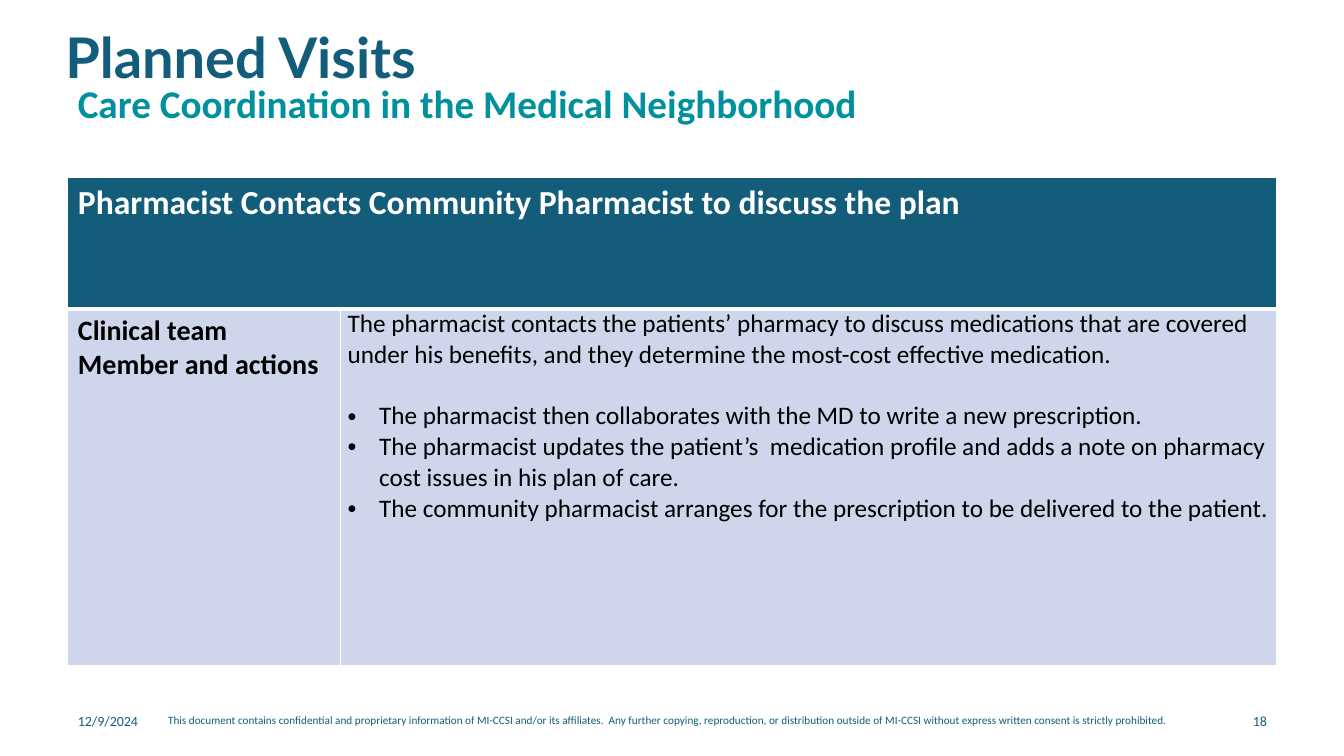
from lxml import etree
from pptx import Presentation
from pptx.dml.color import RGBColor
from pptx.enum import text
from pptx.oxml import ns
from pptx.util import Pt

NAVY = RGBColor(0x13, 0x5D, 0x7A)
TEAL = RGBColor(0x00, 0x90, 0x9E)
LAVENDER = RGBColor(0xCF, 0xD5, 0xEA)
WHITE = RGBColor(0xFF, 0xFF, 0xFF)
BLACK = RGBColor(0x00, 0x00, 0x00)
TOP, MIDDLE, BOTTOM = (text.MSO_ANCHOR.TOP, text.MSO_ANCHOR.MIDDLE,
                       text.MSO_ANCHOR.BOTTOM)

BULLETS = [
    "The pharmacist then collaborates with the MD to write a new prescription.",
    "The pharmacist updates the patient’s  medication profile and adds a note "
    "on pharmacy cost issues in his plan of care.",
    "The community pharmacist arranges for the prescription to be delivered "
    "to the patient.",
]


def style(p, size, color, bold=False, name="Calibri"):
    for r in p.runs:
        r.font.size, r.font.bold, r.font.name = Pt(size), bold, name
        r.font.color.rgb = color


def add_text(s, box, words, size, color=NAVY, bold=False, name="Calibri",
             anchor=TOP, align=text.PP_ALIGN.LEFT, spacing=1.0):
    tf = s.shapes.add_textbox(*(Pt(v) for v in box)).text_frame
    tf.word_wrap, tf.vertical_anchor = True, anchor
    p = tf.paragraphs[0]
    p.text, p.alignment, p.line_spacing = words, align, spacing
    style(p, size, color, bold, name)


def add_bullet(p):
    pPr = p._p.get_or_add_pPr()
    pPr.set("marL", str(Pt(22.5)))
    pPr.set("indent", str(-Pt(22.5)))
    font = etree.SubElement(pPr, ns.qn("a:buFont"))
    font.set("typeface", "Arial")
    etree.SubElement(pPr, ns.qn("a:buChar")).set("char", "•")


def set_borders(cell, top=1, bottom=1):
    tcPr = cell._tc.get_or_add_tcPr()
    widths = {"a:lnL": 1, "a:lnR": 1, "a:lnT": top, "a:lnB": bottom}
    for i, (tag, width) in enumerate(widths.items()):
        ln = etree.Element(ns.qn(tag), w=str(Pt(width)))
        fill = etree.SubElement(ln, ns.qn("a:solidFill"))
        etree.SubElement(fill, ns.qn("a:srgbClr")).set("val", str(WHITE))
        tcPr.insert(i, ln)


def fill_cell(cell, words, size, fill, color, bold=True, **borders):
    cell.fill.solid()
    cell.fill.fore_color.rgb = fill
    set_borders(cell, **borders)
    p = cell.text_frame.paragraphs[0]
    p.text = words
    style(p, size, color, bold)


def add_visit_table(s):
    tbl = s.shapes.add_table(2, 2, Pt(48.5), Pt(127), Pt(863.5), Pt(348.5)).table
    for col, width in zip(tbl.columns, (194.5, 669)):
        col.width = Pt(width)
    for row, height in zip(tbl.rows, (93.5, 255)):
        row.height = Pt(height)

    # Header across both columns
    tbl.cell(0, 0).merge(tbl.cell(0, 1))
    fill_cell(tbl.cell(0, 0),
              "Pharmacist Contacts Community Pharmacist to discuss the plan",
              24, NAVY, WHITE, bottom=3)

    # Row label and actions
    fill_cell(tbl.cell(1, 0), "Clinical team Member and actions",
              20, LAVENDER, BLACK, top=3)
    actions = tbl.cell(1, 1)
    actions.margin_left = actions.margin_right = Pt(5.4)
    actions.margin_top = actions.margin_bottom = Pt(0)
    fill_cell(actions,
              "The pharmacist contacts the patients’ pharmacy to discuss "
              "medications that are covered under his benefits, and they "
              "determine the most-cost effective medication.",
              18, LAVENDER, BLACK, bold=False, top=3)
    for i, words in enumerate(BULLETS):
        p = actions.text_frame.add_paragraph()
        p.text = words
        add_bullet(p)
        p.space_before = Pt(0 if i else 22)
        style(p, 18, BLACK)


def main():
    prs = Presentation()
    prs.slide_width, prs.slide_height = Pt(960), Pt(540)
    s = prs.slides.add_slide(prs.slide_layouts[6])

    # Headings
    add_text(s, (39.6, 18, 846, 44.6), "Planned Visits", 40, bold=True,
             name="Lato", spacing=0.9)
    add_text(s, (48.5, 29.5, 839.5, 65), "Care Coordination in the Medical Neighborhood",
             28, TEAL, bold=True, anchor=BOTTOM, spacing=0.9)

    add_visit_table(s)

    # Footer
    add_text(s, (48.5, 500.5, 72.5, 28.8), "12/9/2024", 10, anchor=MIDDLE)
    add_text(s, (113, 506, 734.5, 23),
             "This document contains confidential and proprietary information of "
             "MI-CCSI and/or its affiliates.  Any further copying, reproduction, "
             "or distribution outside of MI-CCSI without express written consent "
             "is strictly prohibited.", 8)
    add_text(s, (839.5, 500.5, 72.5, 28.8), "18", 10, anchor=MIDDLE,
             align=text.PP_ALIGN.RIGHT)

    prs.save("out.pptx")


if __name__ == "__main__":
    main()
